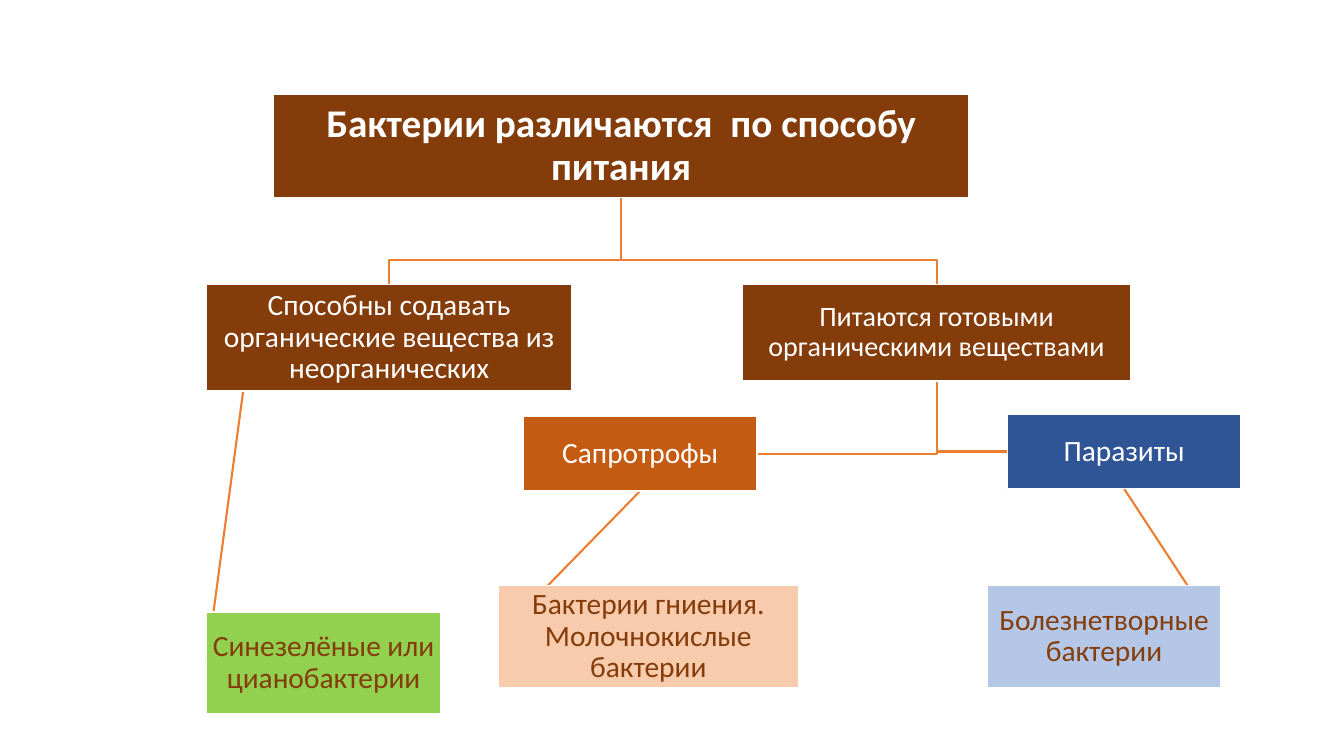
from dataclasses import dataclass

from pptx import Presentation
from pptx.dml.color import RGBColor
from pptx.enum.shapes import MSO_CONNECTOR, MSO_SHAPE
from pptx.enum.text import MSO_ANCHOR, PP_ALIGN
from pptx.oxml.ns import qn
from pptx.util import Inches, Pt

BROWN, WHITE, ORANGE = "843C0B", "FFFFFF", "ED7D31"
BOTTOM, LEFT, RIGHT = 2, 1, 3


@dataclass
class Node:
    """One labelled rectangle of the diagram, measured in inches."""
    text: str
    left: float
    top: float
    width: float
    height: float
    fill: str
    color: str = WHITE
    size: int = 21
    bold: bool = False
    inset: float = 0.01

    def point(self, across, down):
        """Return the point at the given fractions of the rectangle."""
        return (Inches(self.left + self.width * across),
                Inches(self.top + self.height * down))


NODES = {
    "title": Node("Бактерии различаются  по способу питания", 2.71, 0.94, 6.9, 1.02,
                  BROWN, size=28, bold=True, inset=0.02),
    "makers": Node("Способны содавать органические вещества из неорганических",
                   2.05, 2.82, 3.62, 1.06, BROWN),
    "cyano": Node("Синезелёные или цианобактерии", 2.05, 6.07, 2.32, 1.01, "92D050", BROWN),
    "eaters": Node("Питаются готовыми органическими веществами",
                   7.36, 2.82, 3.86, 0.96, BROWN, size=20),
    "saprotrophs": Node("Сапротрофы", 5.19, 4.13, 2.32, 0.74, "C55A11"),
    "decay": Node("Бактерии гниения. Молочнокислые бактерии",
                  4.94, 5.81, 2.98, 1.01, "F8CBAD", BROWN),
    "parasites": Node("Паразиты", 9.99, 4.11, 2.32, 0.74, "2F5597"),
    "pathogens": Node("Болезнетворные бактерии", 9.79, 5.81, 2.32, 1.01, "B4C7E7", BROWN),
}


def rgb(value):
    """Turn a hex string into a colour."""
    return RGBColor.from_string(value)


def style_line(shape, color, points):
    """Set the colour and the width of a line."""
    shape.line.color.rgb = rgb(color)
    shape.line.width = Pt(points)


def add_bent_line(page, start, *corners):
    """Draw an open line through right-angled corners."""
    builder = page.shapes.build_freeform(*start, scale=1.0)
    builder.add_line_segments(corners, close=False)
    line = builder.convert_to_shape()
    line.shadow.inherit = False
    line.fill.background()
    style_line(line, ORANGE, 1.5)


def add_straight_line(page, start, end):
    """Draw a straight connector without a shadow."""
    line = page.shapes.add_connector(MSO_CONNECTOR.STRAIGHT, *start, *end)
    style_line(line, ORANGE, 1.5)
    properties = line._element.spPr
    properties.append(properties.makeelement(qn("a:effectLst"), {}))
    return line


def add_node(page, node):
    """Draw a rectangle with its centred label."""
    box = page.shapes.add_shape(MSO_SHAPE.RECTANGLE, Inches(node.left), Inches(node.top),
                                Inches(node.width), Inches(node.height))
    box.shadow.inherit = False
    box.fill.solid()
    box.fill.fore_color.rgb = rgb(node.fill)
    style_line(box, WHITE, 1)
    frame = box.text_frame
    frame.text = node.text
    frame.word_wrap = True
    frame.vertical_anchor = MSO_ANCHOR.MIDDLE
    frame.margin_left = frame.margin_right = Inches(node.inset)
    frame.margin_top = frame.margin_bottom = Inches(node.inset)
    para = frame.paragraphs[0]
    para.alignment = PP_ALIGN.CENTER
    para.line_spacing = 0.9
    font = para.runs[0].font
    font.name, font.size, font.bold = "Calibri", Pt(node.size), node.bold
    font.color.rgb = rgb(node.color)
    return box


def add_branches(page, nodes):
    """Draw the bent lines from each parent to its two children."""
    start_x, start_y = nodes["title"].point(0.5, 1)
    for name in ("makers", "eaters"):
        end_x, end_y = nodes[name].point(0.5, 0)
        fork_y = end_y - Inches(0.24)
        add_bent_line(page, (start_x, start_y), (start_x, fork_y),
                      (end_x, fork_y), (end_x, end_y))
    start_x, start_y = nodes["eaters"].point(0.5, 1)
    for name, side in (("saprotrophs", 1), ("parasites", 0)):
        end_x, end_y = nodes[name].point(side, 0.5)
        add_bent_line(page, (start_x, start_y), (start_x, end_y), (end_x, end_y))


def add_diagram(page, nodes):
    """Draw the whole tree with its lines behind the rectangles."""
    add_branches(page, nodes)
    makers_line = add_straight_line(page, nodes["makers"].point(0.1, 1),
                                    nodes["cyano"].point(0, 0.5))
    examples = []
    for parent, child, side in (("saprotrophs", "decay", LEFT),
                                ("parasites", "pathogens", RIGHT)):
        line = add_straight_line(page, nodes[parent].point(0.5, 1),
                                 nodes[child].point(int(side == RIGHT), 0.5))
        examples.append((line, parent, child, side))
    boxes = {name: add_node(page, node) for name, node in nodes.items()}
    makers_line.end_connect(boxes["cyano"], LEFT)
    for line, parent, child, side in examples:
        line.begin_connect(boxes[parent], BOTTOM)
        line.end_connect(boxes[child], side)


def main():
    """Build the slide and save it."""
    deck = Presentation()
    deck.slide_width, deck.slide_height = Inches(13.33), Inches(7.5)
    page = deck.slides.add_slide(deck.slide_layouts[6])
    add_diagram(page, NODES)
    deck.save("out.pptx")


if __name__ == "__main__":
    main()
